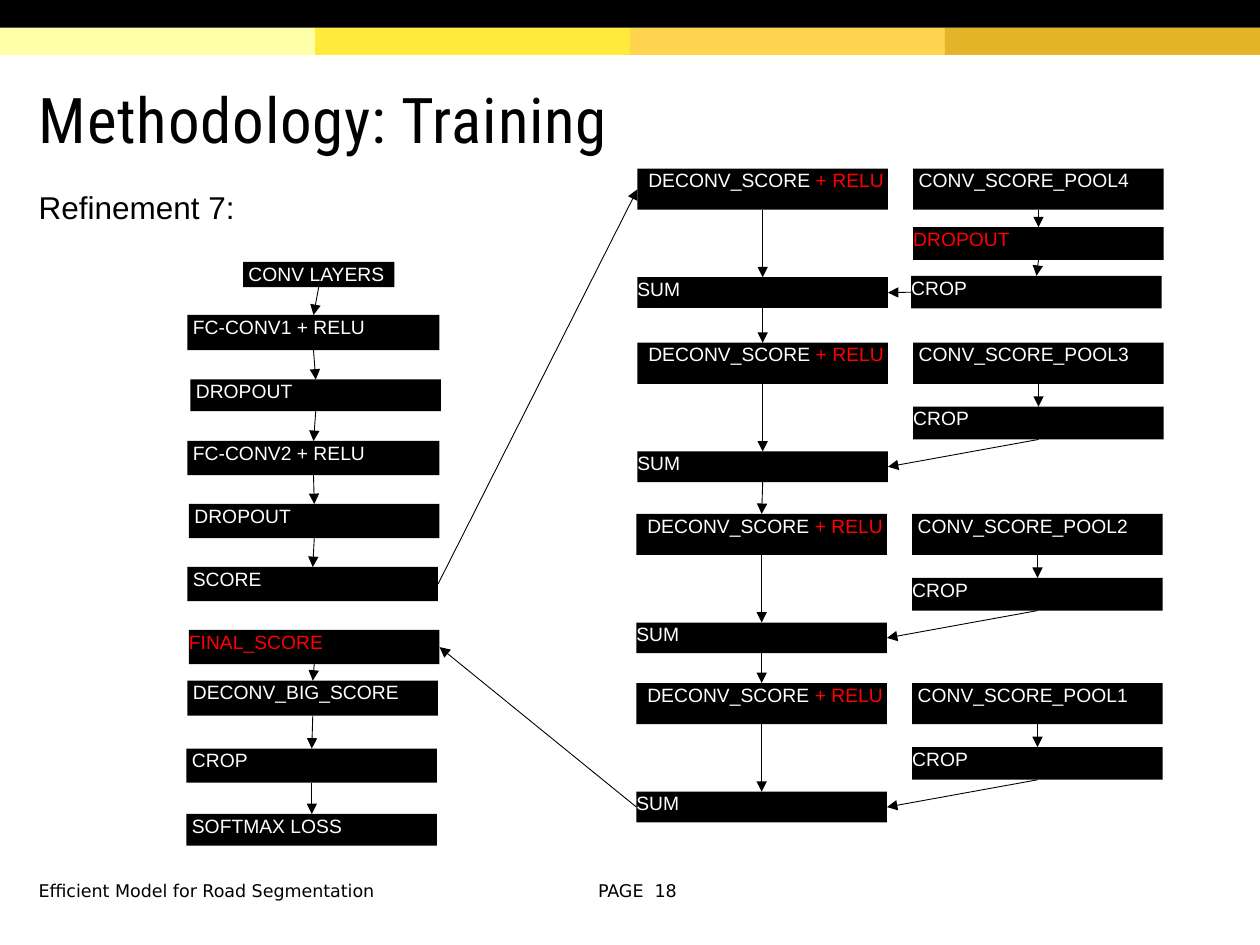
import pptx
import pptx.dml.color
import pptx.enum.shapes
import pptx.enum.text
import pptx.util
from lxml import etree
from pptx.oxml.ns import qn

Cm = pptx.util.Cm
Pt = pptx.util.Pt
ALIGN = pptx.enum.text.PP_ALIGN
ANCHOR = pptx.enum.text.MSO_ANCHOR

BLACK, WHITE, RED = "000000", "FFFFFF", "FF0000"
BOX_W = 5.05
INDENT = 0.11
TOP, LEFT, BOTTOM, RIGHT = range(4)  # connection sites of a rectangle

STRIPES = ["FFFFAA", "FFEA3D", "FFD54F", "E4B429"]

# text, colour, indent, left, top, width, height
TRUNK = [
    ("CONV LAYERS", WHITE, INDENT, 4.9, 5.28, 3.05, 0.51),
    ("FC-CONV1 + RELU", WHITE, INDENT, 3.78, 6.35, 5.08, 0.71),
    ("DROPOUT", WHITE, INDENT, 3.84, 7.65, BOX_W, 0.64),
    ("FC-CONV2 + RELU", WHITE, INDENT, 3.78, 8.89, 5.08, 0.69),
    ("DROPOUT", WHITE, INDENT, 3.81, 10.16, BOX_W, 0.69),
    ("SCORE", WHITE, INDENT, 3.78, 11.43, BOX_W, 0.69),
]
TAIL = [
    ("FINAL_SCORE", RED, 0, 3.81, 12.7, BOX_W, 0.69),
    ("DECONV_BIG_SCORE", WHITE, INDENT, 3.78, 13.72, BOX_W, 0.71),
    ("CROP", WHITE, INDENT, 3.76, 15.09, BOX_W, 0.69),
    ("SOFTMAX LOSS", WHITE, INDENT, 3.76, 16.41, BOX_W, 0.64),
]
# pool number, left, top
STAGES = [(4, 12.85, 3.4), (3, 12.85, 6.91), (2, 12.83, 10.36), (1, 12.83, 13.77)]


def rgb(value):
    return pptx.dml.color.RGBColor.from_string(value)


def set_attrs(target, values):
    for name, value in values.items():
        setattr(target, name, value)


def add_run(p, text, size, font, color):
    r = p.add_run()
    r.text = text
    set_attrs(r.font, {"size": Pt(size), "name": font})
    r.font.color.rgb = rgb(color)
    return r


def add_rect(s, left, top, width, height, color):
    sp = s.shapes.add_shape(pptx.enum.shapes.MSO_SHAPE.RECTANGLE,
                            Cm(left), Cm(top), Cm(width), Cm(height))
    sp.shadow.inherit = False
    sp.fill.solid()
    sp.fill.fore_color.rgb = rgb(color)
    sp.line.fill.background()
    return sp


def add_layer(s, runs, indent, left, top, width, height):
    """Black network layer box; runs is a list of (text, colour)."""
    sp = add_rect(s, left, top, width, height, BLACK)
    tf = sp.text_frame
    set_attrs(tf, {"margin_left": Cm(indent), "margin_top": 0, "margin_right": 0,
                   "margin_bottom": 0, "vertical_anchor": ANCHOR.TOP,
                   "word_wrap": True})
    p = tf.paragraphs[0]
    p.alignment = ALIGN.LEFT
    for text, color in runs:
        add_run(p, text, 11, "Arial", color)
    return sp


def add_arrow(s, source, source_site, target, target_site):
    c = s.shapes.add_connector(pptx.enum.shapes.MSO_CONNECTOR.STRAIGHT, 0, 0, 0, 0)
    c.begin_connect(source, source_site)
    c.end_connect(target, target_site)
    c.line.width = Pt(0.5)
    c.line.color.rgb = rgb(BLACK)
    etree.SubElement(c.line._get_or_add_ln(), qn("a:tailEnd"), type="triangle")
    etree.SubElement(c._element.spPr, qn("a:effectLst"))


def add_text(s, box, text, size, font, frame=None, para=None):
    sp = s.shapes.add_textbox(*(Cm(v) for v in box))
    tf = sp.text_frame
    set_attrs(tf, {"word_wrap": True, **(frame or {})})
    p = tf.paragraphs[0]
    set_attrs(p, para or {})
    return add_run(p, text, size, font, BLACK)


def add_header(s):
    for i, color in enumerate(STRIPES):
        add_rect(s, i * 6.35, 0.56, 6.35, 0.55, color)
    add_rect(s, 0, 0, 25.4, 0.56, BLACK)


def add_texts(s):
    middle = {"vertical_anchor": ANCHOR.MIDDLE}
    r = add_text(s, (0.53, 1.19, 24.1, 2.49), "Methodology: Training", 36,
                 "Roboto Condensed", {**middle, "margin_top": Cm(0.25)},
                 {"line_spacing": 0.85})
    r.font._element.set("spc", "50")
    add_text(s, (0.53, 3.66, 4.5, 1.02), "Refinement 7:", 18, "Arial",
             {"word_wrap": False})
    add_text(s, (0.53, 17.6, 10.9, 0.69), "Efficient Model for Road Segmentation",
             10, "DejaVu Sans", middle)
    add_text(s, (11.63, 17.6, 2.44, 0.69), "PAGE  18", 10, "DejaVu Sans",
             middle, {"alignment": ALIGN.CENTER})


def add_column(s, layers):
    """Stack of layers joined downwards; returns the first and last box."""
    boxes = [add_layer(s, [(text, color)], indent, *box)
             for text, color, indent, *box in layers]
    for upper, lower in zip(boxes, boxes[1:]):
        add_arrow(s, upper, BOTTOM, lower, TOP)
    return boxes[0], boxes[-1]


def add_stage(s, pool, x, y):
    """Upsampling stage fused with one pooling layer; returns deconv and sum."""
    side = x + 5.56
    deconv = add_layer(s, [("DECONV_SCORE", WHITE), (" + RELU", RED)], 0.22,
                       x, y, BOX_W, 0.83)
    total = add_layer(s, [("SUM", WHITE)], 0, x, y + 2.19, BOX_W, 0.62)
    add_arrow(s, deconv, BOTTOM, total, TOP)

    branch = [(f"CONV_SCORE_POOL{pool}", WHITE, INDENT, side, y, BOX_W, 0.83)]
    if pool == 4:
        branch += [("DROPOUT", RED, 0, side, y + 1.18, BOX_W, 0.66),
                   ("CROP", WHITE, 0, side - 0.04, y + 2.16, BOX_W, 0.66)]
    else:
        branch.append(("CROP", WHITE, 0, side, y + 1.29, BOX_W, 0.66))
    crop = add_column(s, branch)[1]
    add_arrow(s, crop, LEFT if pool == 4 else BOTTOM, total, RIGHT)
    return deconv, total


def main():
    prs = pptx.Presentation()
    set_attrs(prs, {"slide_width": Cm(25.4), "slide_height": Cm(19.05)})
    s = prs.slides.add_slide(prs.slide_layouts[6])
    add_header(s)
    add_texts(s)

    score = add_column(s, TRUNK)[1]
    final_score = add_column(s, TAIL)[0]
    stages = [add_stage(s, *stage) for stage in STAGES]
    for (_, total), (deconv, _) in zip(stages, stages[1:]):
        add_arrow(s, total, BOTTOM, deconv, TOP)
    add_arrow(s, score, RIGHT, stages[0][0], LEFT)
    add_arrow(s, stages[-1][1], LEFT, final_score, RIGHT)
    prs.save("out.pptx")


if __name__ == "__main__":
    main()
